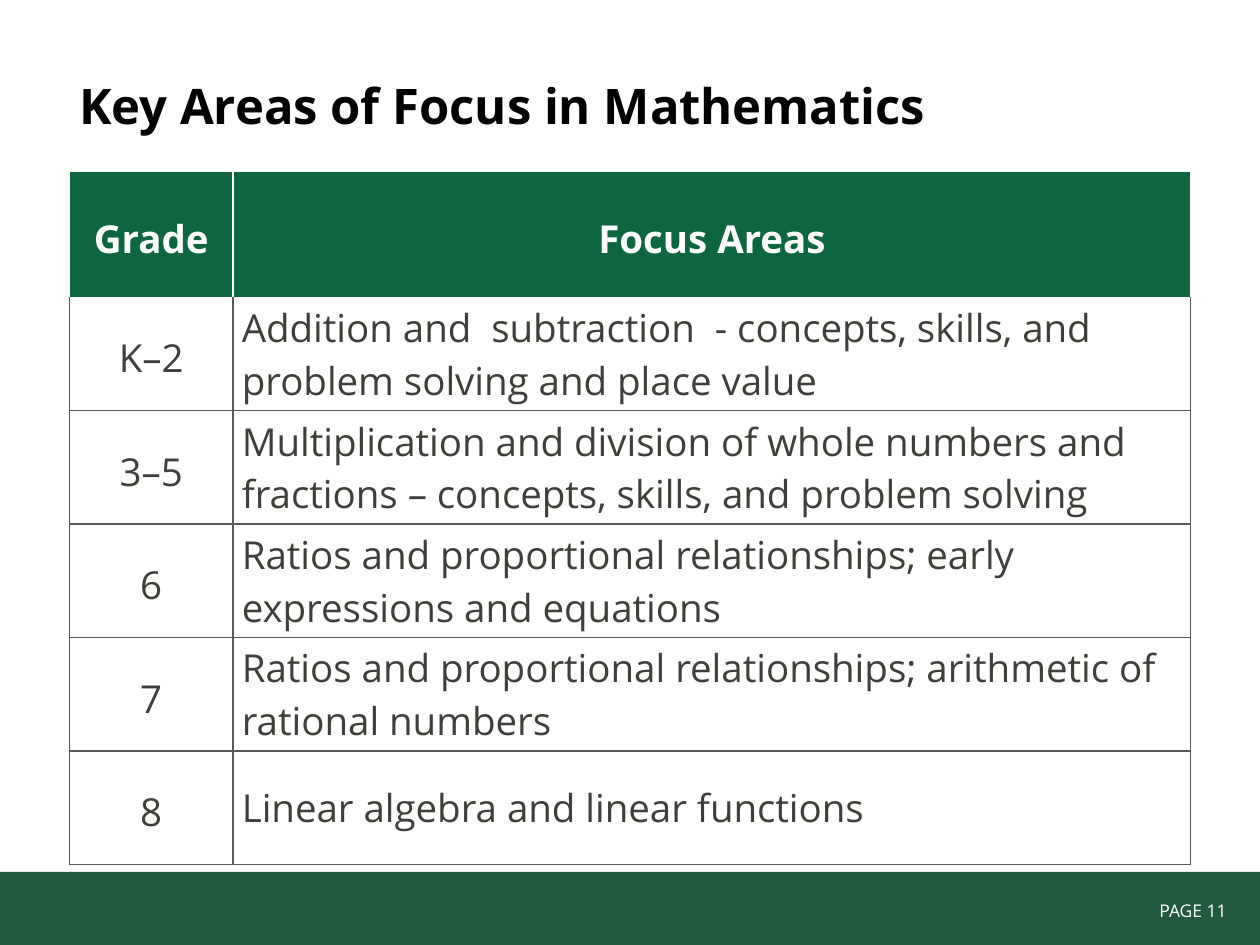
from typing import NamedTuple

from lxml.etree import SubElement
from pptx import Presentation
from pptx.dml.color import RGBColor
from pptx.enum.shapes import MSO_SHAPE
from pptx.enum.text import MSO_ANCHOR, PP_ALIGN
from pptx.oxml.ns import qn
from pptx.util import Pt

FONT = "Open Sans"
COLORS = {
    "band": "23593E",
    "header": "0E6641",
    "white": "FFFFFF",
    "black": "000000",
    "body": "3F3F39",
    "grid": "595959",
}


class FocusRow(NamedTuple):
    grade: str
    focus: str


HEADER = FocusRow("Grade", "Focus Areas")
ROWS = [
    FocusRow("K–2", "Addition and  subtraction  - concepts, skills, and "
                    "problem solving and place value"),
    FocusRow("3–5", "Multiplication and division of whole numbers and "
                    "fractions – concepts, skills, and problem solving"),
    FocusRow("6", "Ratios and proportional relationships; early "
                  "expressions and equations"),
    FocusRow("7", "Ratios and proportional relationships; arithmetic of "
                  "rational numbers"),
    FocusRow("8", "Linear algebra and linear functions"),
]


def rgb(name: str) -> RGBColor:
    return RGBColor.from_string(COLORS[name])


def write(tf, text: str, size: float, color: str, bold: bool = False,
          align=PP_ALIGN.LEFT, spacing: float = 1.0) -> None:
    p = tf.paragraphs[0]
    p.text = text
    p.alignment = align
    p.line_spacing = spacing
    p.font.name = FONT
    p.font.size = Pt(size)
    p.font.bold = bold
    p.font.color.rgb = rgb(color)


def add_text(s, left: float, top: float, width: float, height: float,
             text: str, size: float, color: str, **style) -> None:
    tf = s.shapes.add_textbox(Pt(left), Pt(top), Pt(width), Pt(height)).text_frame
    tf.word_wrap = True
    write(tf, text, size, color, **style)


def set_borders(cell, color: str, top: str) -> None:
    tc_pr = cell._tc.get_or_add_tcPr()
    for side in ("L", "R", "T", "B"):
        ln = SubElement(tc_pr, qn(f"a:ln{side}"), w=str(Pt(1)))
        fill = SubElement(ln, qn("a:solidFill"))
        SubElement(fill, qn("a:srgbClr"), val=COLORS[top if side == "T" else color])


def fill_cell(cell, text: str, is_header: bool, centered: bool, top: str) -> None:
    cell.vertical_anchor = MSO_ANCHOR.MIDDLE
    cell.margin_left = cell.margin_right = Pt(5)
    cell.margin_top = cell.margin_bottom = Pt(0)
    set_borders(cell, "white" if is_header else "grid", top)
    if is_header:
        cell.fill.solid()
        cell.fill.fore_color.rgb = rgb("header")
    else:
        cell.fill.background()
    write(cell.text_frame, text, 22, "white" if is_header else "body",
          bold=is_header,
          align=PP_ALIGN.CENTER if centered else PP_ALIGN.LEFT,
          spacing=1.15 if centered else 1.0)


def add_focus_table(s, left: float, top: float) -> None:
    widths = (93.6, 547.2)
    heights = [72] + [64.8] * len(ROWS)
    table = s.shapes.add_table(len(heights), len(widths), Pt(left), Pt(top),
                               Pt(sum(widths)), Pt(sum(heights))).table
    table.first_row = table.horz_banding = False
    for column, width in zip(table.columns, widths):
        column.width = Pt(width)
    for i, (row, height) in enumerate(zip([HEADER] + ROWS, heights)):
        table.rows[i].height = Pt(height)
        for j, text in enumerate(row):
            fill_cell(table.cell(i, j), text, is_header=i == 0,
                      centered=i == 0 or j == 0,
                      top="white" if i <= 1 else "grid")


def main() -> None:
    prs = Presentation()
    prs.slide_width, prs.slide_height = Pt(720), Pt(540)
    s = prs.slides.add_slide(prs.slide_layouts[6])

    # Footer band and page number
    band = s.shapes.add_shape(MSO_SHAPE.RECTANGLE, Pt(0), Pt(498.2), Pt(720.7), Pt(42.5))
    band.shadow.inherit = False
    band.fill.solid()
    band.fill.fore_color.rgb = rgb("band")
    band.line.fill.background()
    add_text(s, 594, 510.5, 114, 19.4, "PAGE 11", 10, "white", align=PP_ALIGN.RIGHT)

    # Focus areas by grade
    add_focus_table(s, 39.6, 97.9)

    # Title
    add_text(s, 38.2, 39.6, 635.8, 41, "Key Areas of Focus in Mathematics",
             28, "black", bold=True)

    prs.save("out.pptx")


if __name__ == "__main__":
    main()
